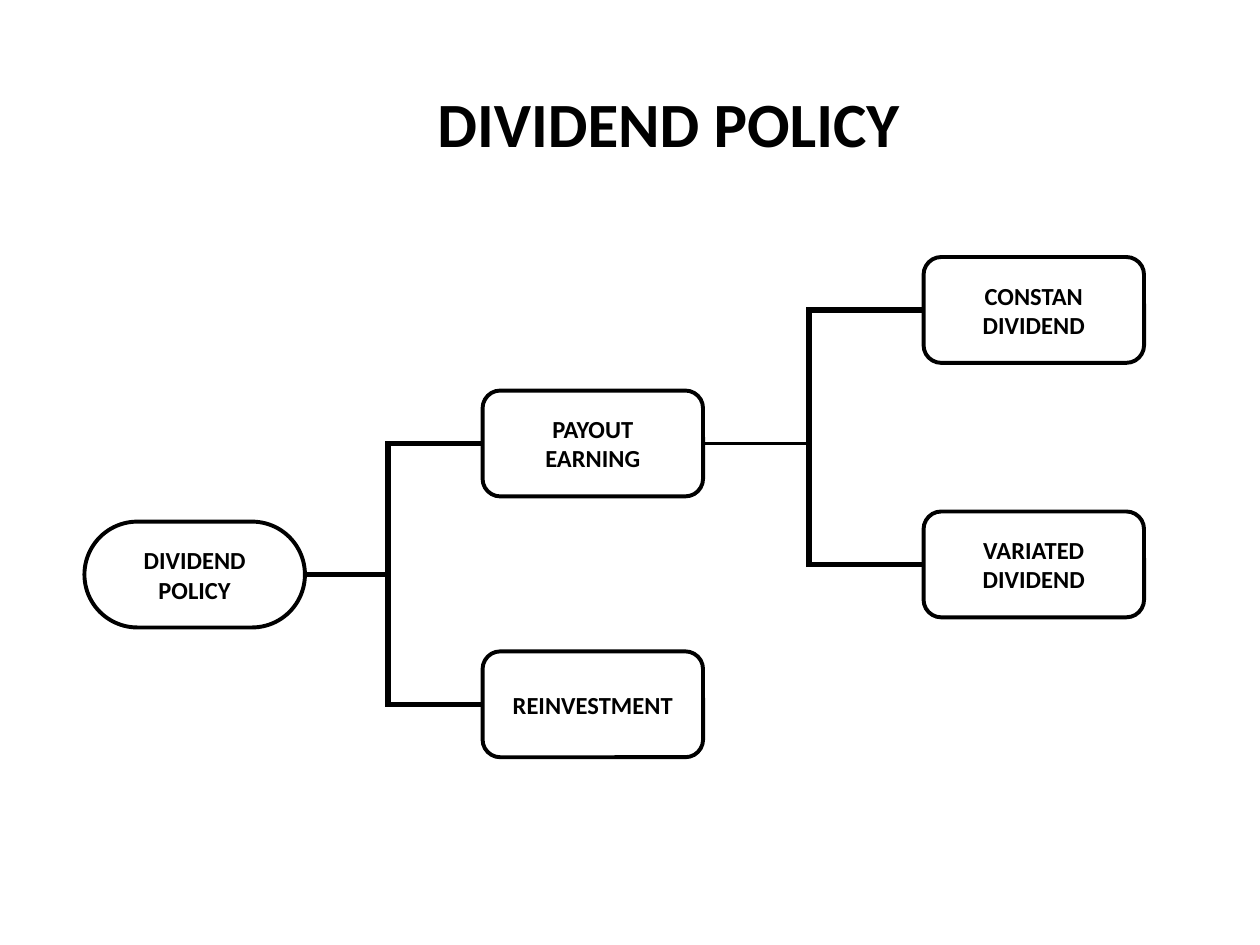
from dataclasses import dataclass

from lxml.etree import SubElement
from pptx import Presentation
from pptx.dml.color import RGBColor
from pptx.enum.shapes import MSO_CONNECTOR as Link, MSO_SHAPE as Kind
from pptx.enum.text import MSO_ANCHOR as Anchor, MSO_AUTO_SIZE as Fit, PP_ALIGN as Align
from pptx.oxml.ns import qn
from pptx.util import Pt


@dataclass(frozen=True)
class Theme:
    ink: RGBColor = RGBColor(0, 0, 0)
    paper: RGBColor = RGBColor(255, 255, 255)
    font: str = "Calibri"
    title: int = 36
    label: int = 14
    edge: float = 2.25
    bold: int = 3


THEME = Theme()
PX = 9144  # 100 px to the inch
NODE_W, NODE_H = 175, 84
LAP = 2  # trunk overshoot that squares off the corners


def emu(*px):
    return [n * PX for n in px]


def write(frame, lines, size):
    for i, line in enumerate(lines):
        para = frame.paragraphs[0] if i == 0 else frame.add_paragraph()
        para.alignment = Align.CENTER
        run = para.add_run()
        run.text = line
        font = run.font
        font.name, font.size, font.bold = THEME.font, Pt(size), True
        font.color.rgb = THEME.ink


def title(slide, box, text):
    frame = slide.shapes.add_textbox(*emu(*box)).text_frame
    frame.word_wrap = True
    frame.auto_size = Fit.SHAPE_TO_FIT_TEXT
    write(frame, [text], THEME.title)


def node(slide, left, top, lines, bend=0.167):
    """Add a rounded box; bend is its corner ratio."""
    box = emu(left, top, NODE_W, NODE_H)
    shape = slide.shapes.add_shape(Kind.ROUNDED_RECTANGLE, *box)
    shape.adjustments[0] = bend
    shape.shadow.inherit = False
    shape.fill.solid()
    shape.fill.fore_color.rgb = THEME.paper
    shape.line.color.rgb = THEME.ink
    shape.line.width = Pt(THEME.edge)
    frame = shape.text_frame
    frame.word_wrap = False
    frame.vertical_anchor = Anchor.MIDDLE
    write(frame, lines, THEME.label)
    return shape


def rule(slide, start, end, width):
    line = slide.shapes.add_connector(Link.STRAIGHT, *start, *end)
    line.line.color.rgb = THEME.ink
    line.line.width = Pt(width)
    SubElement(line._element.spPr, qn("a:effectLst"))
    return line


def fork(slide, parent, kids, trunk, stem=THEME.bold):
    """Join a parent to its kids through a vertical trunk."""
    x, lap = trunk * PX, LAP * PX
    mid = parent.top + parent.height // 2
    side = parent.left + parent.width
    rule(slide, (side, mid), (x, mid), stem).begin_connect(parent, 3)
    for kid in kids:
        y = kid.top + kid.height // 2
        over = lap if y > mid else -lap
        rule(slide, (x, y + over), (x, mid - over), THEME.bold)
        rule(slide, (x, y), (kid.left, y), THEME.bold).end_connect(kid, 1)


def tree(slide, left, top):
    def place(dx, dy, *lines, **look):
        return node(slide, left + dx, top + dy, lines, **look)

    policy = place(0, 210, "DIVIDEND", "POLICY", bend=0.5)
    payout = place(316, 106, "PAYOUT", "EARNING")
    reinvest = place(316, 313, "REINVESTMENT")
    constant = place(666, 0, "CONSTAN", "DIVIDEND")
    varied = place(666, 202, "VARIATED", "DIVIDEND")
    fork(slide, policy, (payout, reinvest), left + 241)
    fork(slide, payout, (constant, varied), left + 575, THEME.edge)


def main():
    deck = Presentation()
    deck.slide_width, deck.slide_height = emu(1000, 750)
    slide = deck.slides.add_slide(deck.slide_layouts[6])
    tree(slide, 67, 204)
    title(slide, (289, 62, 483, 71), "DIVIDEND POLICY")
    deck.save("out.pptx")


if __name__ == "__main__":
    main()
